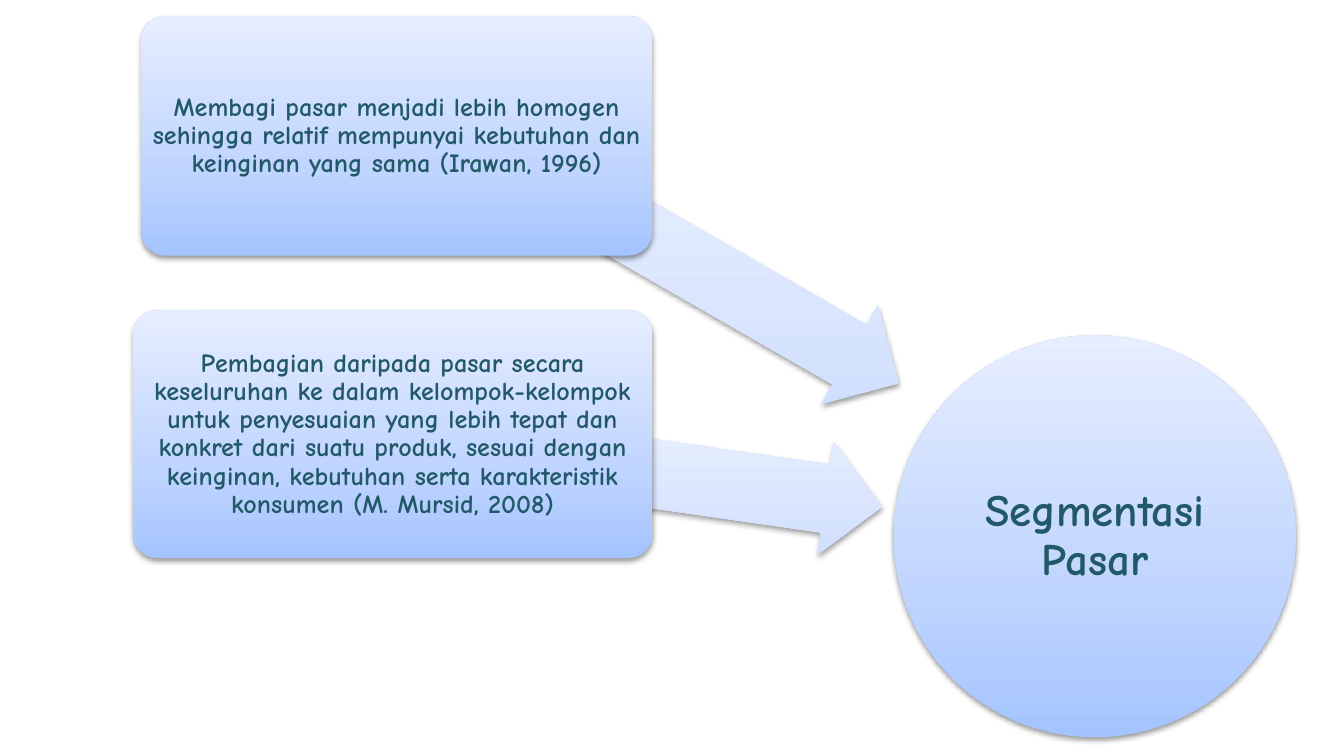
from dataclasses import dataclass

from lxml.etree import SubElement
from pptx import Presentation
from pptx.dml.color import RGBColor as Rgb
from pptx.enum.shapes import MSO_SHAPE as Kind
from pptx.enum.text import MSO_ANCHOR as Anchor, PP_ALIGN as Align
from pptx.oxml.ns import qn
from pptx.shapes.autoshape import Shape
from pptx.shapes.shapetree import SlideShapes as Shapes
from pptx.util import Pt


@dataclass(frozen=True)
class Theme:
    font: str = "Comic Neue"
    ink: str = "215968"
    body: int = 14
    title: int = 24
    solid: tuple[str, ...] = ("A4C4FF", "BFD4FF", "E6EEFF")
    pale: tuple[str, ...] = ("CDDDFE", "DBE6FE", "F0F5FF")
    stops: tuple[int, ...] = (0, 35, 100)


@dataclass(frozen=True)
class Box:
    left: float
    top: float
    width: float
    height: float


@dataclass(frozen=True)
class Arrow:
    box: Box
    turn: float


@dataclass(frozen=True)
class Label:
    box: Box
    text: str
    size: int
    inset: float


@dataclass(frozen=True)
class Point:
    """A definition and the arrow that leads from it to the topic."""
    arrow: Arrow
    label: Label


THEME = Theme()
POINTS = (
    Point(
        Arrow(Box(196.6, 98.6, 305.3, 61.2), 209.9),
        Label(Box(75.8, 8.7, 273.6, 128.2),
              "Membagi pasar menjadi lebih homogen sehingga relatif mempunyai "
              "kebutuhan dan keinginan yang sama (Irawan, 1996)", THEME.body, 2.2),
    ),
    Point(
        Arrow(Box(216, 222.5, 257.8, 61.2), 188.2),
        Label(Box(71.2, 166.4, 278.4, 132.6),
              "Pembagian daripada pasar secara keseluruhan ke dalam "
              "kelompok-kelompok untuk penyesuaian yang lebih tepat dan konkret "
              "dari suatu produk, sesuai dengan keinginan, kebutuhan serta "
              "karakteristik konsumen (M. Mursid, 2008)", THEME.body, 2.2),
    ),
)
TOPIC = Label(Box(478.8, 179.7, 215.3, 215.3), "Segmentasi Pasar", THEME.title, 1.5)


def shade(shape: Shape, tones: tuple[str, ...]) -> None:
    """Fill upwards through the tones and cast a soft shadow below."""
    shape.line.fill.background()
    shape.shadow.inherit = False
    shape.fill.gradient()
    props = shape.element.spPr
    grad = props.find(qn("a:gradFill"))
    grad.set("rotWithShape", "0")
    for child in list(grad):
        grad.remove(child)
    stops = SubElement(grad, qn("a:gsLst"))
    for place, tone in zip(THEME.stops, tones):
        stop = SubElement(stops, qn("a:gs"), pos=str(place * 1000))
        SubElement(stop, qn("a:srgbClr"), val=tone)
    SubElement(grad, qn("a:lin"), ang=str(270 * 60000), scaled="0")
    glow = SubElement(props.find(qn("a:effectLst")), qn("a:outerShdw"),
                      blurRad=str(Pt(3.1)), dist=str(Pt(1.6)),
                      dir=str(90 * 60000), rotWithShape="0")
    tint = SubElement(glow, qn("a:srgbClr"), val="000000")
    SubElement(tint, qn("a:alpha"), val="38000")


def add(shapes: Shapes, kind: Kind, box: Box, tones: tuple[str, ...]) -> Shape:
    shape = shapes.add_shape(kind, Pt(box.left), Pt(box.top),
                             Pt(box.width), Pt(box.height))
    shade(shape, tones)
    return shape


def write(shape: Shape, label: Label) -> None:
    frame = shape.text_frame
    frame.text = label.text
    frame.word_wrap = True
    frame.vertical_anchor = Anchor.MIDDLE
    frame.margin_left = frame.margin_right = Pt(label.inset)
    frame.margin_top = frame.margin_bottom = Pt(label.inset)
    para = frame.paragraphs[0]
    para.alignment = Align.CENTER
    para.line_spacing = 0.9
    font = para.runs[0].font
    font.name, font.size, font.bold = THEME.font, Pt(label.size), True
    font.color.rgb = Rgb.from_string(THEME.ink)


def draw(shapes: Shapes, point: Point) -> None:
    arrow = add(shapes, Kind.LEFT_ARROW, point.arrow.box, THEME.pale)
    arrow.rotation = point.arrow.turn
    arrow.adjustments[0], arrow.adjustments[1] = 0.6, 0.5
    card = add(shapes, Kind.ROUNDED_RECTANGLE, point.label.box, THEME.solid)
    card.adjustments[0] = 0.1
    write(card, point.label)


def main() -> None:
    deck = Presentation()
    deck.slide_width, deck.slide_height = Pt(720), Pt(405)
    shapes = deck.slides.add_slide(deck.slide_layouts[6]).shapes
    write(add(shapes, Kind.OVAL, TOPIC.box, THEME.solid), TOPIC)
    for point in POINTS:
        draw(shapes, point)
    deck.save("out.pptx")


if __name__ == "__main__":
    main()
